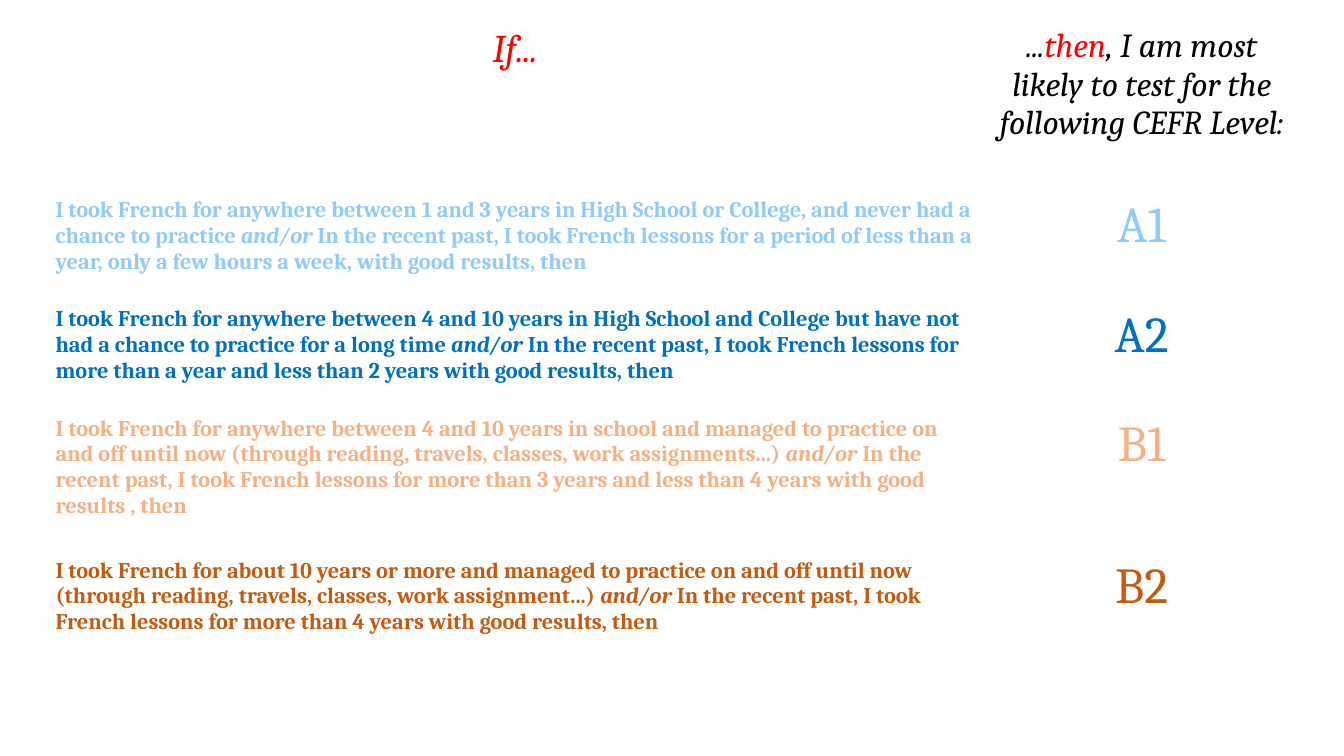
"""Builds a slide that matches past French study to a likely CEFR level."""
from pptx import Presentation
from pptx.dml.color import RGBColor
from pptx.enum.text import PP_ALIGN
from pptx.util import Pt

COLORS = {
    "black": "000000", "red": "FF0000", "sky": "91CAFD",
    "blue": "0070C0", "peach": "F4B183", "rust": "C55A11",
}
FONT = "Cambria"
IF_HEADING = [("If...", "red")]
THEN_HEADING = [
    ("...", "black"),
    ("then", "red"),
    (", I am most likely to test for the following CEFR Level:", "black"),
]
LEVELS = [
    ("A1", "sky",
     "I took French for anywhere between 1 and 3 years in High School or College, "
     "and never had a chance to practice ",
     "In the recent past, I took French lessons for a period of less than a year, "
     "only a few hours a week, with good results, then"),
    ("A2", "blue",
     "I took French for anywhere between 4 and 10 years in High School and College "
     "but have not had a chance to practice for a long time ",
     "In the recent past, I took French lessons for more than a year and less than "
     "2 years with good results, then"),
    ("B1", "peach",
     "I took French for anywhere between 4 and 10 years in school and managed to "
     "practice on and off until now (through reading, travels, classes, work "
     "assignments...) ",
     "In the recent past, I took French lessons for more than 3 years and less than "
     "4 years with good results , then"),
    ("B2", "rust",
     "I took French for about 10 years or more and managed to practice on and off "
     "until now (through reading, travels, classes, work assignment...) ",
     "In the recent past, I took French lessons for more than 4 years with good "
     "results, then"),
]
COLUMN_WIDTHS = [671, 224]
ROW_HEIGHTS = [44, 31.5, 78, 78, 101.5, 78]
LEFT, TOP, HEIGHT = 32.5, 16, 490


def write(cell, pieces, size, bold=False, align=PP_ALIGN.CENTER):
    """Fill a cell with (text, color, italic) pieces."""
    paragraph = cell.text_frame.paragraphs[0]
    paragraph.alignment = align
    for text, color, italic in pieces:
        run = paragraph.add_run()
        run.text = text
        run.font.name = FONT
        run.font.size = Pt(size)
        run.font.bold = bold
        run.font.italic = italic
        run.font.color.rgb = RGBColor.from_string(COLORS[color])


def main():
    """Lay out the table and save the deck."""
    deck = Presentation()
    deck.slide_width, deck.slide_height = Pt(960), Pt(540)
    slide = deck.slides.add_slide(deck.slide_layouts[6])
    frame = slide.shapes.add_table(
        len(ROW_HEIGHTS), len(COLUMN_WIDTHS),
        Pt(LEFT), Pt(TOP), Pt(sum(COLUMN_WIDTHS)), Pt(HEIGHT))
    levels_table = frame.table
    levels_table.first_row = levels_table.horz_banding = False
    for column, width in zip(levels_table.columns, COLUMN_WIDTHS):
        column.width = Pt(width)
    for row, height in zip(levels_table.rows, ROW_HEIGHTS):
        row.height = Pt(height)
    frame.height = Pt(HEIGHT)
    for cell in levels_table.iter_cells():
        cell.fill.background()

    for column, (heading, size) in enumerate([(IF_HEADING, 28), (THEN_HEADING, 24)]):
        write(levels_table.cell(0, column),
              [(text, color, True) for text, color in heading], size)
    for row, (level, color, study, recent) in enumerate(LEVELS, start=2):
        background = [(study, color, False), ("and/or ", color, True),
                      (recent, color, False)]
        write(levels_table.cell(row, 0), background, 16, True, PP_ALIGN.LEFT)
        write(levels_table.cell(row, 1), [(level, color, False)], 36)
    deck.save("out.pptx")


if __name__ == "__main__":
    main()
